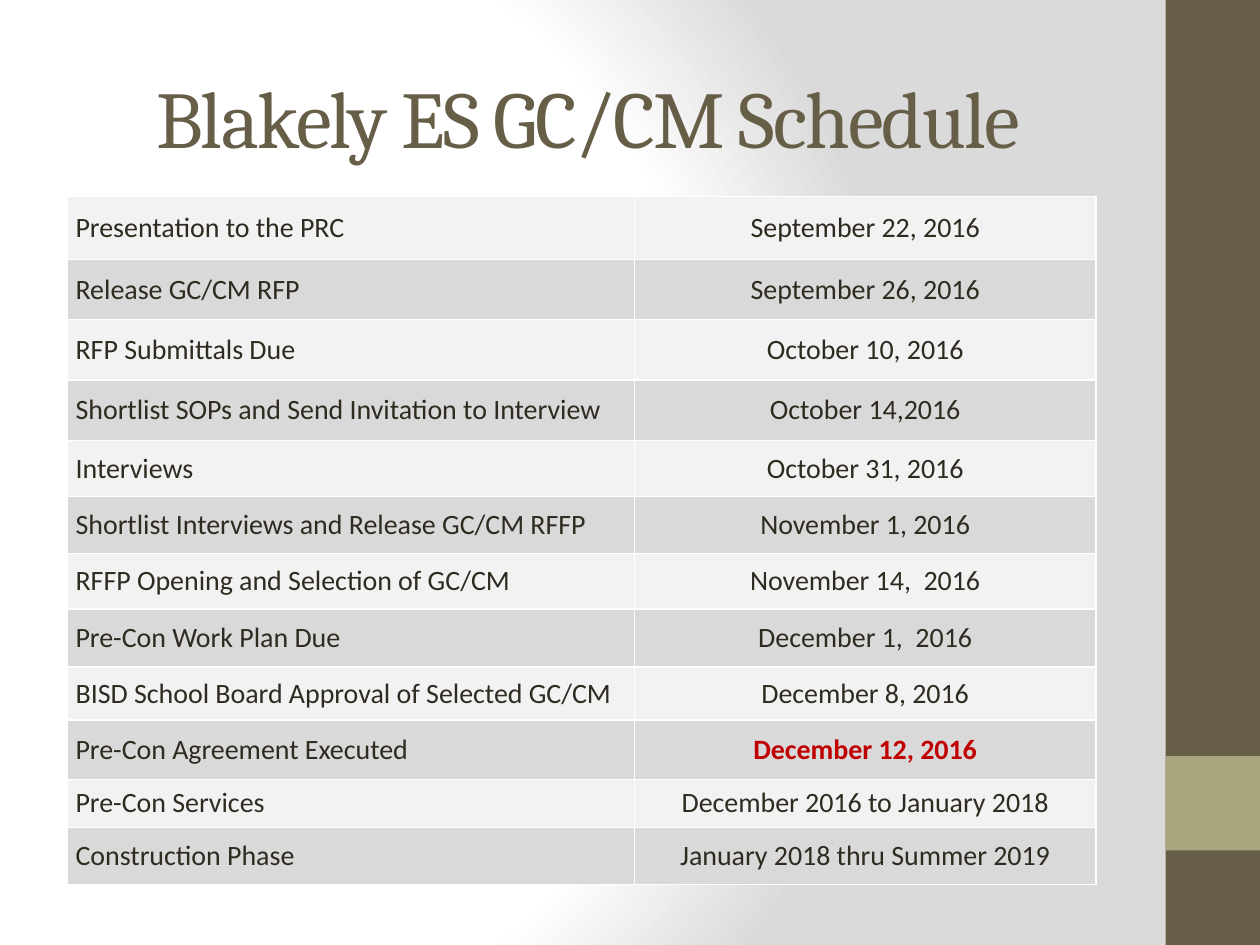
import pptx
import pptx.dml.color
import pptx.enum.shapes
import pptx.enum.text
import pptx.oxml
import pptx.oxml.ns
import pptx.util

Pt = pptx.util.Pt
RGBColor = pptx.dml.color.RGBColor
PP_ALIGN = pptx.enum.text.PP_ALIGN
MSO_ANCHOR = pptx.enum.text.MSO_ANCHOR
MSO_SHAPE = pptx.enum.shapes.MSO_SHAPE
NAMESPACE = pptx.oxml.ns.nsdecls("a")

BROWN = RGBColor(0x67, 0x5E, 0x47)
OLIVE = RGBColor(0xA9, 0xA5, 0x7C)
INK = RGBColor(0x2F, 0x2B, 0x20)
RED = RGBColor(0xC0, 0x00, 0x00)
WHITE = RGBColor(0xFF, 0xFF, 0xFF)
MIST = RGBColor(0xDA, 0xDA, 0xDA)
ROW_FILLS = (RGBColor(0xF2, 0xF2, 0xF2), RGBColor(0xD9, 0xD9, 0xD9))

# Milestone, date, row height in points
SCHEDULE = [
    ("Presentation to the PRC", "September 22, 2016", 36),
    ("Release GC/CM RFP", "September 26, 2016", 34.5),
    ("RFP Submittals Due", "October 10, 2016", 34.5),
    ("Shortlist SOPs and Send Invitation to Interview", "October 14,2016", 34.5),
    ("Interviews", "October 31, 2016", 32),
    ("Shortlist Interviews and Release GC/CM RFFP", "November 1, 2016", 32.5),
    ("RFFP Opening and Selection of GC/CM", "November 14,  2016", 32),
    ("Pre-Con Work Plan Due", "December 1,  2016", 33),
    ("BISD School Board Approval of Selected GC/CM", "December 8, 2016", 30.25),
    ("Pre-Con Agreement Executed", "December 12, 2016", 34),
    ("Pre-Con Services", "December 2016 to January 2018", 27.5),
    ("Construction Phase", "January 2018 thru Summer 2019", 32.5),
]
KEY_DATE = "December 12, 2016"


class SlideBuilder:
    title_font = {"name": "Cambria", "size": Pt(46), "bold": False}
    table_font = {"name": "Calibri", "size": Pt(16), "bold": False}
    cell_format = {
        "vertical_anchor": MSO_ANCHOR.MIDDLE,
        "margin_left": Pt(5), "margin_right": Pt(5),
        "margin_top": 0, "margin_bottom": 0,
    }

    def __init__(self, slide):
        self.slide = slide

    def apply(self, target, values):
        for name, value in values.items():
            setattr(target, name, value)

    def add_background(self, stops):
        self.slide.background.fill.solid()
        properties = self.slide.element.find(".//" + pptx.oxml.ns.qn("p:bgPr"))
        stop_xml = "".join(
            f'<a:gs pos="{position * 1000}"><a:srgbClr val="{color}"/></a:gs>'
            for position, color in stops)
        gradient = pptx.oxml.parse_xml(
            f'<a:gradFill {NAMESPACE} rotWithShape="1"><a:gsLst>{stop_xml}</a:gsLst>'
            '<a:path path="circle">'
            '<a:fillToRect l="20000" t="50000" r="100000" b="50000"/>'
            '</a:path></a:gradFill>')
        properties.replace(properties[0], gradient)

    def add_rectangle(self, left, top, width, height, color):
        shape = self.slide.shapes.add_shape(
            MSO_SHAPE.RECTANGLE, Pt(left), Pt(top), Pt(width), Pt(height))
        shape.shadow.inherit = False
        shape.fill.solid()
        shape.fill.fore_color.rgb = color
        shape.line.fill.background()

    def add_text(self, text_frame, text, font, color, alignment):
        paragraph = text_frame.paragraphs[0]
        paragraph.alignment = alignment
        run = paragraph.add_run()
        run.text = text
        self.apply(run.font, font)
        run.font.color.rgb = color
        return run

    def add_title(self, text, left, top, width, height):
        title = self.slide.shapes.title
        self.apply(title, {"left": Pt(left), "top": Pt(top),
                           "width": Pt(width), "height": Pt(height)})
        self.apply(title.text_frame, {
            "vertical_anchor": MSO_ANCHOR.MIDDLE, "word_wrap": True,
            "auto_size": pptx.enum.text.MSO_AUTO_SIZE.NONE})
        run = self.add_text(title.text_frame, text, self.title_font,
                            BROWN, PP_ALIGN.CENTER)
        run.font._element.set("spc", "-100")

    def add_borders(self, cell, sides):
        properties = cell._tc.get_or_add_tcPr()
        for side in sides:
            properties.append(pptx.oxml.parse_xml(
                f'<a:ln{side} {NAMESPACE} w="12700"><a:solidFill>'
                f'<a:srgbClr val="{WHITE}"/></a:solidFill></a:ln{side}>'))

    def add_schedule(self, entries, left, top, column_widths):
        heights = [height for *_, height in entries]
        table = self.slide.shapes.add_table(
            len(entries), len(column_widths), Pt(left), Pt(top),
            Pt(sum(column_widths)), Pt(sum(heights))).table
        self.apply(table, {"first_row": False, "horz_banding": False})
        for column, width in zip(table.columns, column_widths):
            column.width = Pt(width)
        for row_index, (milestone, date, height) in enumerate(entries):
            table.rows[row_index].height = Pt(height)
            for column_index, text in enumerate((milestone, date)):
                cell = table.cell(row_index, column_index)
                self.apply(cell, self.cell_format)
                # White rules on the inner edges only
                sides = ["R" if column_index == 0 else "L"]
                if row_index > 0:
                    sides.append("T")
                if row_index < len(entries) - 1:
                    sides.append("B")
                self.add_borders(cell, sides)
                cell.fill.solid()
                cell.fill.fore_color.rgb = ROW_FILLS[row_index % 2]
                is_key = text == KEY_DATE
                self.add_text(cell.text_frame, text,
                              {**self.table_font, "bold": is_key},
                              RED if is_key else INK,
                              PP_ALIGN.CENTER if column_index else PP_ALIGN.LEFT)


def main():
    presentation = pptx.Presentation()
    presentation.slide_width, presentation.slide_height = Pt(720), Pt(540)
    title_only = presentation.slide_layouts[5]
    builder = SlideBuilder(presentation.slides.add_slide(title_only))

    # Background and side band
    builder.add_background([(0, WHITE), (75, WHITE), (100, MIST)])
    builder.add_rectangle(666, 0, 54, 540, BROWN)
    builder.add_rectangle(666, 432, 54, 54, OLIVE)

    # Title and schedule
    builder.add_title("Blakely ES GC/CM Schedule", 36, 21.6, 600, 90)
    builder.add_schedule(SCHEDULE, 38.2, 112.2, (324.5, 263.5))

    presentation.save("out.pptx")


if __name__ == "__main__":
    main()
